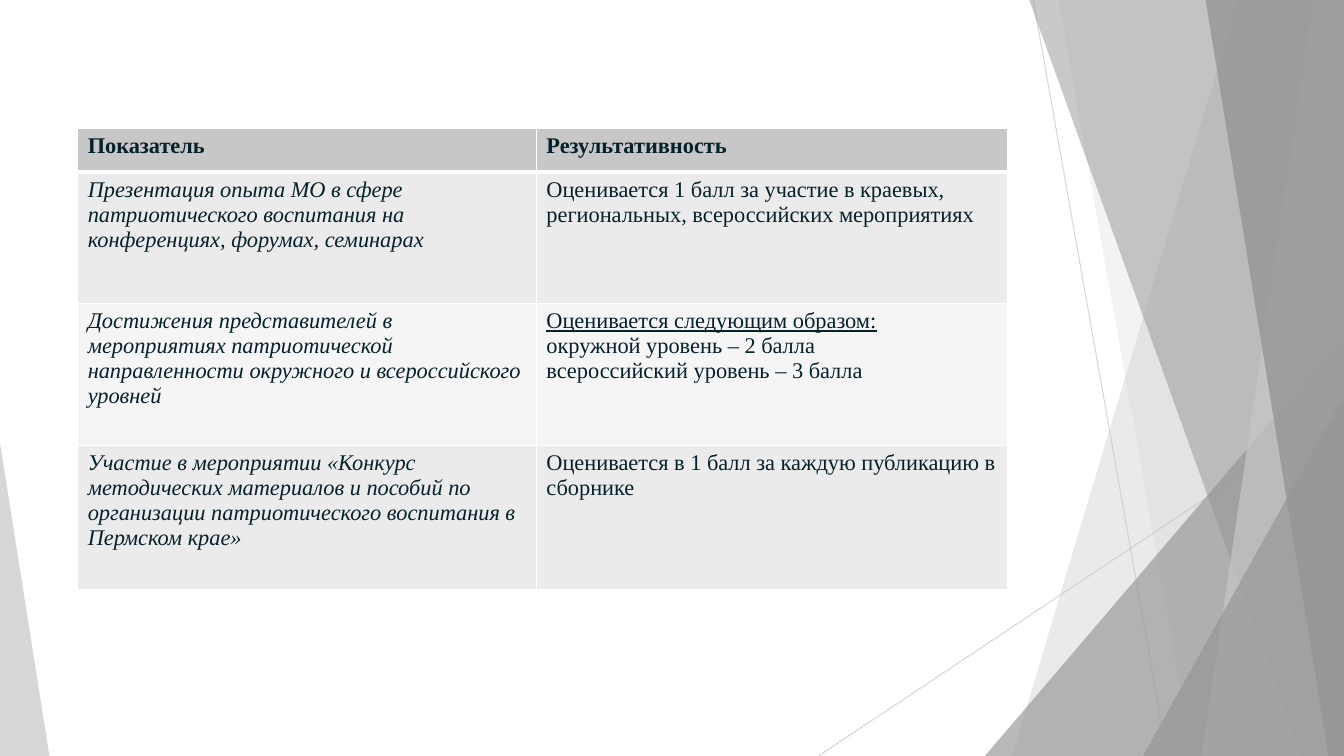
from lxml import etree
from pptx import Presentation
from pptx.dml.color import RGBColor
from pptx.enum.shapes import MSO_CONNECTOR, MSO_SHAPE
from pptx.oxml.ns import qn
from pptx.util import Inches, Pt

LINE = MSO_CONNECTOR.STRAIGHT
WEDGE = MSO_SHAPE.ISOSCELES_TRIANGLE

WHITE = RGBColor(0xFF, 0xFF, 0xFF)
LIGHT = RGBColor(0xC7, 0xC7, 0xC7)
DARK = RGBColor(0x95, 0x95, 0x95)
INK = RGBColor(0x05, 0x21, 0x2A)
BAND = RGBColor(0xEB, 0xEB, 0xEB)
PALE = RGBColor(0xF5, 0xF5, 0xF5)

# Lengths below are percent of the slide's width or height
RAYS = [(76.88, 0, 86.85, 100), (100, 53.73, 60.9, 100)]
BACK = [(92.1, 75.3, LIGHT, 36), (78.75, 88.73, LIGHT, 20)]
FRONT = [(76.58, 96.83, DARK, 50), (97.73, 89.4, LIGHT, 70),
         (89.7, 98.85, DARK, 80)]

COLS = [34.13, 35.03]
ROWS = [5.87, 17.33, 18.8, 19.07]
FILLS = [LIGHT, BAND, PALE, BAND]
CELLS = [
    ("Показатель", "Результативность"),
    ("Презентация опыта МО в сфере патриотического воспитания на "
     "конференциях, форумах, семинарах",
     "Оценивается 1 балл за участие в краевых, региональных, "
     "всероссийских мероприятиях"),
    ("Достижения представителей в мероприятиях патриотической "
     "направленности окружного и всероссийского уровней",
     "Оценивается следующим образом:\nокружной уровень – 2 балла\n"
     "всероссийский уровень – 3 балла"),
    ("Участие в мероприятии «Конкурс методических материалов и пособий по "
     "организации патриотического воспитания в Пермском крае»",
     "Оценивается в 1 балл за каждую публикацию в сборнике"),
]


class Deck:
    font = "Times New Roman"
    size = Pt(16)

    def __init__(self):
        self.prs = Presentation()
        self.prs.slide_width = Inches(13.33)
        self.prs.slide_height = Inches(7.5)
        self.slide = self.prs.slides.add_slide(self.prs.slide_layouts[6])
        self.shapes = self.slide.shapes

    def x(self, share):
        return round(self.prs.slide_width * share / 100)

    def y(self, share):
        return round(self.prs.slide_height * share / 100)

    def fade(self, fill, alpha):
        color = fill._xPr.find(".//" + qn("a:srgbClr"))
        etree.SubElement(color, qn("a:alpha"), val=str(alpha * 1000))

    def paint(self, shape, color, alpha):
        shape.shadow.inherit = False
        shape.line.fill.background()
        shape.fill.solid()
        shape.fill.fore_color.rgb = color
        self.fade(shape.fill, alpha)

    def ray(self, left, top, right, low):
        ray = self.shapes.add_connector(
            LINE, self.x(left), self.y(top), self.x(right), self.y(low))
        ray.line.width = Pt(0.75)
        ray.line.color.rgb = LIGHT
        self.fade(ray.line.fill, 70)
        etree.SubElement(ray._element.spPr, qn("a:effectLst"))

    def blade(self, head, foot, color, alpha):
        """Band from a slanted left side to the slide's right edge."""
        form = self.shapes.build_freeform(self.x(head), 0)
        form.add_line_segments([(self.x(100), 0), (self.x(100), self.y(100)),
                                (self.x(foot), self.y(100))], close=True)
        self.paint(form.convert_to_shape(), color, alpha)

    def wedge(self, left, top, width, peak, color, alpha):
        """Triangle that stands on the slide's lower edge."""
        shape = self.shapes.add_shape(WEDGE, self.x(left), self.y(top),
                                      self.x(width), self.y(100 - top))
        shape.adjustments[0] = peak
        self.paint(shape, color, alpha)

    def edge(self, cell, side, width):
        line = etree.SubElement(cell._tc.get_or_add_tcPr(), qn("a:ln" + side),
                                w=str(Pt(width)))
        fill = etree.SubElement(line, qn("a:solidFill"))
        etree.SubElement(fill, qn("a:srgbClr"), val=str(WHITE))

    def cell(self, cell, text, row, col):
        for side in "LRTB":
            thick = (row, side) in ((0, "B"), (1, "T"))
            self.edge(cell, side, 3 if thick else 1)
        cell.fill.solid()
        cell.fill.fore_color.rgb = FILLS[row]
        cell.text_frame.text = text
        for part in cell.text_frame.paragraphs:
            for run in part.runs:
                font = run.font
                font.name, font.size = self.font, self.size
                font.color.rgb = INK
                font.bold = row == 0
                font.italic = row > 0 and col == 0
                font.underline = run.text.endswith(":")

    def table(self, left, top):
        table = self.shapes.add_table(
            len(ROWS), len(COLS), self.x(left), self.y(top),
            self.x(sum(COLS)), self.y(sum(ROWS))).table
        for col, width in zip(table.columns, COLS):
            col.width = self.x(width)
        for row, height in zip(table.rows, ROWS):
            row.height = self.y(height)
        for r, texts in enumerate(CELLS):
            for c, text in enumerate(texts):
                self.cell(table.cell(r, c), text, r, c)


def main():
    deck = Deck()

    # Facets behind the table
    for ray in RAYS:
        deck.ray(*ray)
    for blade in BACK:
        deck.blade(*blade)
    deck.wedge(73.28, 44.4, 26.72, 1, DARK, 66)
    for blade in FRONT:
        deck.blade(*blade)
    deck.wedge(85.05, 52.4, 14.95, 1, DARK, 66)
    deck.wedge(0, 58.53, 3.68, 0, LIGHT, 70)

    # Table of scores
    deck.table(5.78, 16.93)
    deck.prs.save("out.pptx")


if __name__ == "__main__":
    main()
